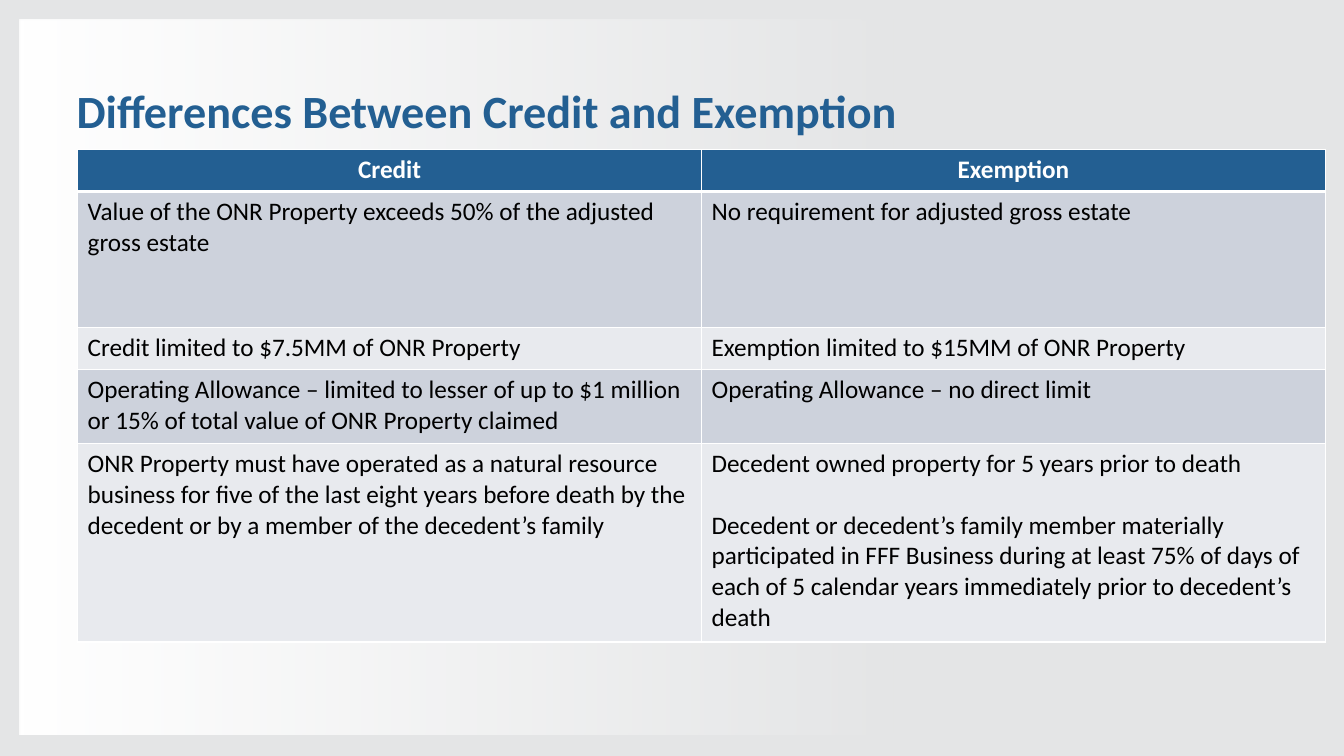
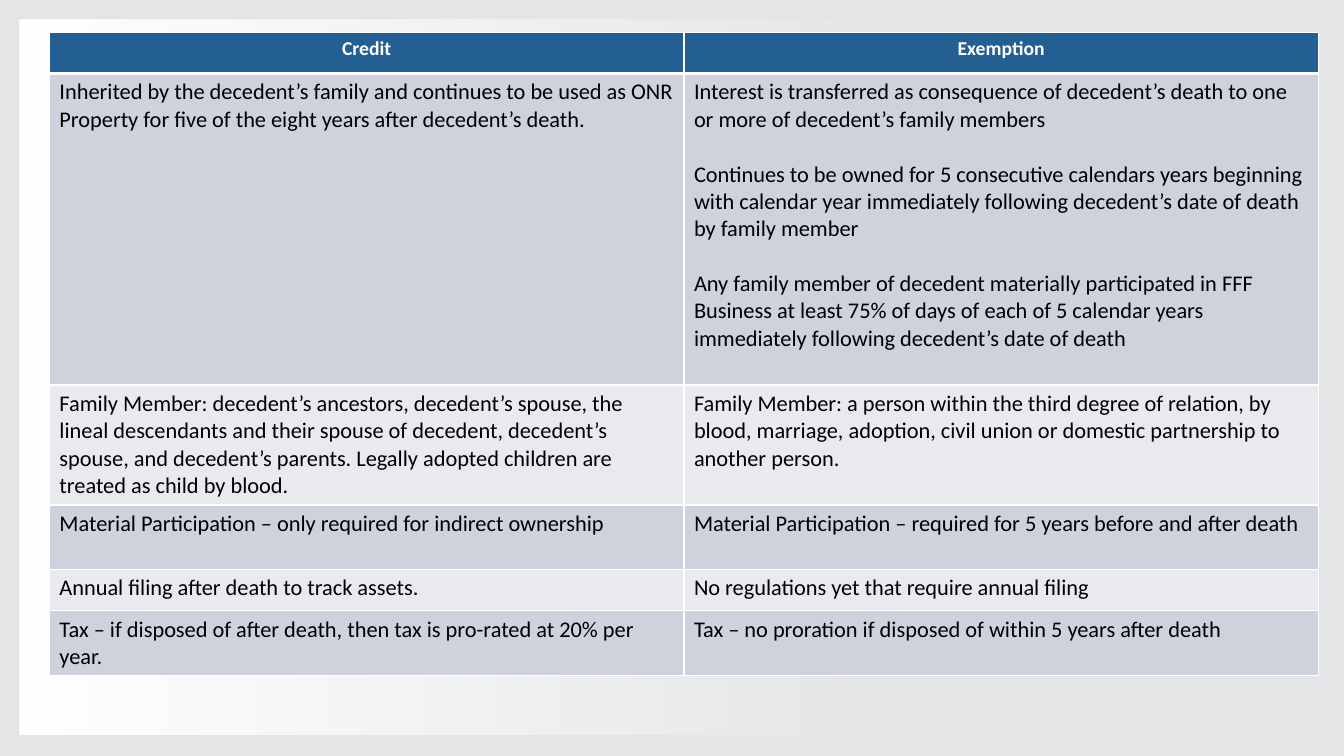
from lxml.etree import SubElement
from pptx import Presentation
from pptx.dml.color import RGBColor
from pptx.enum.shapes import MSO_SHAPE as Preset
from pptx.enum.text import MSO_ANCHOR as Anchor, PP_ALIGN as Align
from pptx.oxml.ns import qn
from pptx.util import Inches, Pt

COLUMNS, ROWS = 40, 22.5
UNIT = Inches(1) / 3
FONT = "Calibri"
WHITE, BLACK, GREY = "FFFFFF", "000000", "E4E5E6"
BLUE, DARK_BAND, LIGHT_BAND = "235F92", "CDD2DC", "E8EAEE"
LINE_SHARE = 1.22
THIN, THICK = 1, 3

HEADINGS = ("Credit", "Exemption")
REQUIREMENTS = [
    ("Value of the ONR Property exceeds 50% of the adjusted gross estate",
     "No requirement for adjusted gross estate"),
    ("Credit limited to $7.5MM of ONR Property",
     "Exemption limited to $15MM of ONR Property"),
    ("Operating Allowance – limited to lesser of up to $1 million or 15% of "
     "total value of ONR Property claimed",
     "Operating Allowance – no direct limit"),
    ("ONR Property must have operated as a natural resource business for five of "
     "the last eight years before death by the decedent or by a member of the "
     "decedent’s family",
     "Decedent owned property for 5 years prior to death\n"
     "Decedent or decedent’s family member materially participated in FFF Business "
     "during at least 75% of days of each of 5 calendar years immediately prior to "
     "decedent’s death"),
]
AFTER_DEATH = [
    ("Inherited by the decedent’s family and continues to be used as ONR Property "
     "for five of the eight years after decedent’s death.",
     "Interest is transferred as consequence of decedent’s death to one or more of "
     "decedent’s family members\n"
     "Continues to be owned for 5 consecutive calendars years beginning with "
     "calendar year immediately following decedent’s date of death by family member\n"
     "Any family member of decedent materially participated in FFF Business at least "
     "75% of days of each of 5 calendar years immediately following decedent’s date "
     "of death"),
    ("Family Member: decedent’s ancestors, decedent’s spouse, the lineal descendants "
     "and their spouse of decedent, decedent’s spouse, and decedent’s parents. "
     "Legally adopted children are treated as child by blood.",
     "Family Member: a person within the third degree of relation, by blood, "
     "marriage, adoption, civil union or domestic partnership to another person."),
    ("Material Participation – only required for indirect ownership",
     "Material Participation – required for 5 years before and after death"),
    ("Annual filing after death to track assets.",
     "No regulations yet that require annual filing"),
    ("Tax – if disposed of after death, then tax is pro-rated at 20% per year.",
     "Tax – no proration if disposed of within 5 years after death"),
]


def rgb(color):
    return RGBColor.from_string(color)


def grid(count):
    return round(count * UNIT)


def write(frame, text, *, size, color=BLACK, bold=False, align=Align.LEFT,
          line_spacing=None, gap=0):
    for index, line in enumerate(text.split("\n")):
        paragraph = frame.paragraphs[0] if index == 0 else frame.add_paragraph()
        paragraph.text = line
        paragraph.alignment = align
        paragraph.line_spacing = line_spacing
        if index:
            paragraph.space_before = Pt(gap)
        font = paragraph.font
        font.name, font.size, font.bold = FONT, Pt(size), bold
        font.color.rgb = rgb(color)


def add_panel(slide, left, top, width, height):
    shape = slide.shapes.add_shape(
        Preset.RECTANGLE, grid(left), grid(top), grid(width), grid(height))
    shape.shadow.inherit = False
    shape.line.fill.background()
    return shape


def fade_to_left(shape):
    fill = shape.fill
    fill.gradient()
    fill.gradient_angle = 180
    for stop, position in zip(fill.gradient_stops, (0.35, 1)):
        stop.position = position
        stop.color.rgb = rgb(WHITE)
    clear_color = next(shape.element.iter(qn("a:srgbClr")))
    SubElement(clear_color, qn("a:alpha")).set("val", "0")


def decorate_master(presentation, slide):
    backdrop = add_panel(slide, 0, 0, COLUMNS, ROWS)
    backdrop.fill.solid()
    backdrop.fill.fore_color.rgb = rgb(GREY)
    sheet = add_panel(slide, 0.57, 0.57, 40.14, 21.3)
    fade_to_left(sheet)
    tree = presentation.slide_master.shapes.element
    for index, shape in enumerate((backdrop, sheet), start=2):
        tree.insert(index, shape.element)


def set_title(slide, text):
    title = slide.shapes.title
    title.left, title.top = grid(1.98), grid(1.2)
    title.width, title.height = grid(34.5), grid(4.35)
    title.text_frame.vertical_anchor = Anchor.MIDDLE
    write(title.text_frame, text, size=33, color=BLUE, bold=True, line_spacing=0.9)


def set_borders(cell, top, bottom):
    properties = cell._tc.get_or_add_tcPr()
    for side, width in (("L", THIN), ("R", THIN), ("T", top), ("B", bottom)):
        line = SubElement(properties, qn(f"a:ln{side}"), w=str(Pt(width)))
        fill = SubElement(line, qn("a:solidFill"))
        SubElement(fill, qn("a:srgbClr"), val=WHITE)


def fill_cell(cell, text, row, body_size, heading_size):
    heading = row == 0
    set_borders(cell, THICK if row == 1 else THIN, THICK if heading else THIN)
    cell.fill.solid()
    band = DARK_BAND if row % 2 else LIGHT_BAND
    cell.fill.fore_color.rgb = rgb(BLUE if heading else band)
    if heading:
        write(cell.text_frame, text, size=heading_size, color=WHITE, bold=True,
              align=Align.CENTER)
    else:
        write(cell.text_frame, text, size=body_size, gap=body_size * LINE_SHARE)


def add_comparison(slide, rows, *, left, top, width, heights, body_size, heading_size):
    content = [HEADINGS, *rows]
    table = slide.shapes.add_table(
        len(content), len(HEADINGS), grid(left), grid(top), grid(width),
        grid(sum(heights))).table
    for column in table.columns:
        column.width = grid(width / len(HEADINGS))
    for row, (texts, height) in enumerate(zip(content, heights)):
        table.rows[row].height = grid(height)
        for column, text in enumerate(texts):
            fill_cell(table.cell(row, column), text, row, body_size, heading_size)


def main():
    presentation = Presentation()
    presentation.slide_width, presentation.slide_height = grid(COLUMNS), grid(ROWS)
    title_only, blank = presentation.slide_layouts[5], presentation.slide_layouts[6]

    requirements = presentation.slides.add_slide(title_only)
    decorate_master(presentation, requirements)
    set_title(requirements, "Differences Between Credit and Exemption")
    add_comparison(requirements, REQUIREMENTS, left=2.31, top=4.44, width=37.14,
                   heights=(1.26, 4.05, 1.26, 2.19, 5.91),
                   body_size=18, heading_size=18)

    after_death = presentation.slides.add_slide(blank)
    add_comparison(after_death, AFTER_DEATH, left=1.47, top=0.96, width=37.77,
                   heights=(1.23, 9.27, 3.57, 1.92, 1.23, 1.92),
                   body_size=16, heading_size=14)

    presentation.save("out.pptx")


if __name__ == "__main__":
    main()
